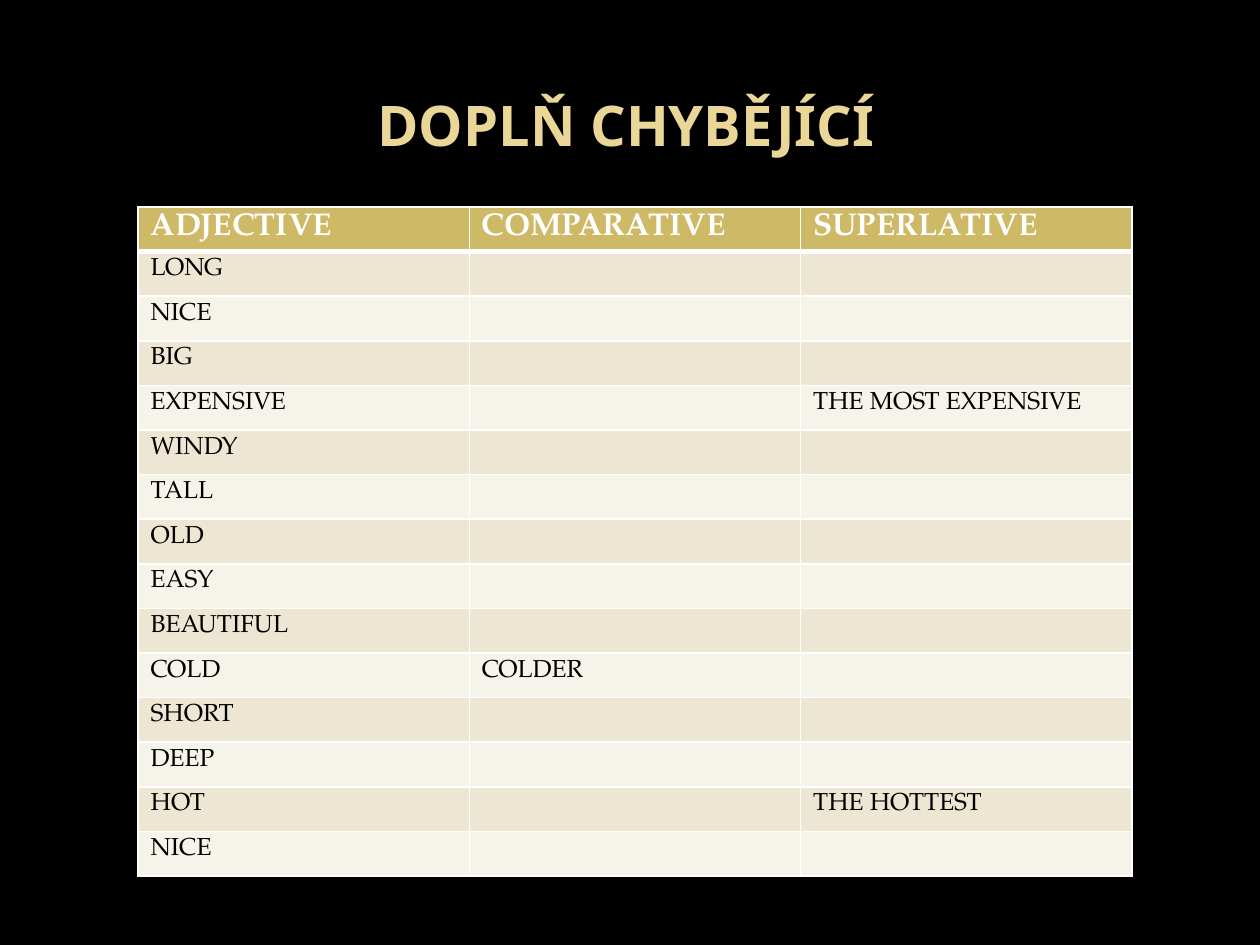
from lxml import etree
from pptx import Presentation
from pptx import util as u
from pptx.dml.color import RGBColor
from pptx.enum import text
from pptx.oxml.ns import qn

EMU_PER_PX = 914400 / 126
TITLE_FONT, TABLE_FONT = "Noto Sans", "TeX Gyre Pagella"
GOLD, WHITE, BLACK = "CEB966", "FFFFFF", "000000"
BANDS = ("EDE6D3", "F6F3EA")
HEADERS = ("ADJECTIVE", "COMPARATIVE", "SUPERLATIVE")
ADJECTIVES = ("LONG", "NICE", "BIG", "EXPENSIVE", "WINDY", "TALL", "OLD", "EASY",
              "BEAUTIFUL", "COLD", "SHORT", "DEEP", "HOT", "NICE")
COMPARATIVES = {"COLD": "COLDER"}
SUPERLATIVES = {"EXPENSIVE": "THE MOST EXPENSIVE", "HOT": "THE HOTTEST"}


def px(n):
    return u.Emu(round(n * EMU_PER_PX))


def rgb(value):
    return RGBColor.from_string(value)


class Deck:
    """Holds the slide style and the current slide."""

    def __init__(self, width, height):
        self.prs = Presentation()
        self.prs.slide_width, self.prs.slide_height = px(width), px(height)

    def add_slide(self, color):
        self.slide = self.prs.slides.add_slide(self.prs.slide_layouts[5])
        fill = self.slide.background.fill
        fill.solid()
        fill.fore_color.rgb = rgb(color)

    def style(self, p, name, size, color, bold):
        p.font.name, p.font.size, p.font.bold = name, u.Pt(size), bold
        p.font.color.rgb = rgb(color)

    def title(self, words, x, y, w, h):
        sp = self.slide.shapes.title
        sp.left, sp.top, sp.width, sp.height = px(x), px(y), px(w), px(h)
        tf = sp.text_frame
        tf.text = words
        tf.vertical_anchor = text.MSO_ANCHOR.MIDDLE
        p = tf.paragraphs[0]
        p.alignment = text.PP_ALIGN.CENTER
        self.style(p, TITLE_FONT, 32, "EAD696", True)

    def border(self, cell, bottom, top):
        tc_pr = cell._tc.get_or_add_tcPr()
        sides = (("a:lnL", 1), ("a:lnR", 1), ("a:lnT", top), ("a:lnB", bottom))
        for i, (tag, width) in enumerate(sides):
            ln = etree.Element(qn(tag), w=str(u.Pt(width)))
            fill = etree.SubElement(ln, qn("a:solidFill"))
            etree.SubElement(fill, qn("a:srgbClr"), val=WHITE)
            tc_pr.insert(i, ln)

    def cell(self, cell, words, row):
        header = row == 0
        cell.fill.solid()
        cell.fill.fore_color.rgb = rgb(GOLD if header else BANDS[(row - 1) % 2])
        self.border(cell, bottom=3 if header else 1, top=3 if row == 1 else 1)
        cell.text = words
        self.style(cell.text_frame.paragraphs[0], TABLE_FONT, 18 if header else 14,
                   WHITE if header else BLACK, header)

    def table(self, rows, x, y, w, h):
        frame = self.slide.shapes.add_table(len(rows), len(rows[0]), px(x), px(y), px(w), px(h))
        for i, row in enumerate(rows):
            for j, words in enumerate(row):
                self.cell(frame.table.cell(i, j), words, i)


def main():
    deck = Deck(1260, 945)
    deck.add_slide(BLACK)
    deck.title("DOPLŇ CHYBĚJÍCÍ", 59, 69, 1134, 110)
    rows = [HEADERS] + [(a, COMPARATIVES.get(a, ""), SUPERLATIVES.get(a, "")) for a in ADJECTIVES]
    deck.table(rows, 138, 207, 994, 669)
    deck.prs.save("out.pptx")


if __name__ == "__main__":
    main()
